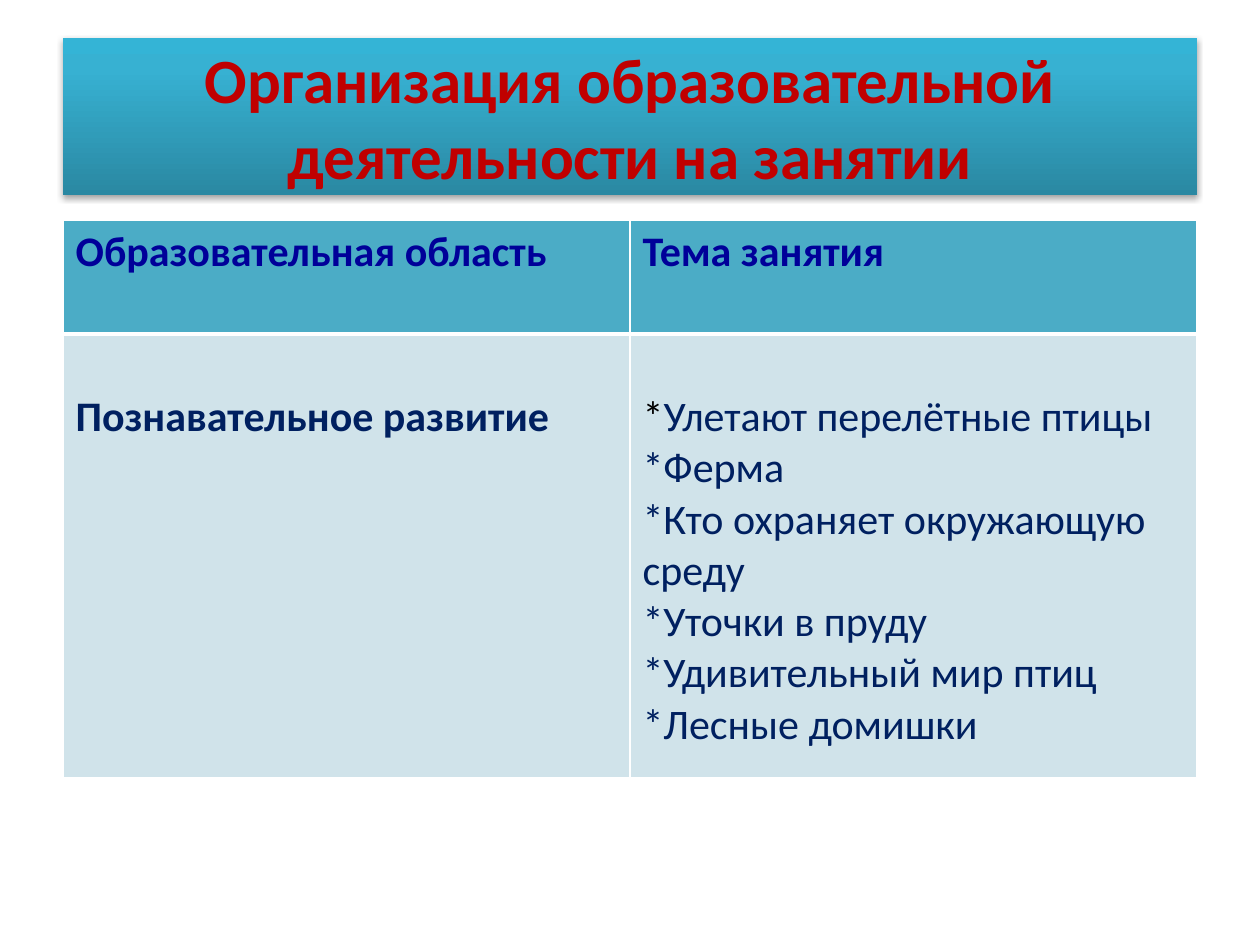
from dataclasses import dataclass

from lxml import etree
from pptx import Presentation, oxml
from pptx import util as u
from pptx.dml.color import RGBColor
from pptx.enum import text
from pptx.oxml.ns import nsdecls


@dataclass(frozen=True)
class Theme:
    font: str = "Calibri"
    title_size: int = 36
    table_size: int = 24
    title: str = "C00000"
    heading: str = "000099"
    body: str = "002060"
    star: str = "000000"
    header_fill: str = "4BACC6"
    body_fill: str = "D0E3EA"
    border: str = "FFFFFF"
    shadow: str = "000000"
    gradient: tuple = ((0, "2A88A2"), (80, "37B1D2"), (100, "34B4D6"))


theme = Theme()


def style(r, size, color, bold):
    r.font.name = theme.font
    r.font.size = u.Pt(size)
    r.font.bold = bold
    r.font.color.rgb = RGBColor.from_string(color)


def set_borders(cell, bottom):
    """Draw 1 pt cell borders, with the bottom one in its own width."""
    tc_pr = cell._tc.get_or_add_tcPr()
    for i, (side, width) in enumerate((("L", 1), ("R", 1), ("T", 1), ("B", bottom))):
        ln = oxml.parse_xml(
            f'<a:ln{side} {nsdecls("a")} w="{u.Pt(width)}"><a:solidFill>'
            f'<a:srgbClr val="{theme.border}"/></a:solidFill></a:ln{side}>')
        tc_pr.insert(i, ln)


prs = Presentation()
prs.slide_width, prs.slide_height = u.Inches(10), u.Inches(7.5)
s = prs.slides.add_slide(prs.slide_layouts[5])

# Title banner
title = s.shapes.title
title.left, title.top = u.Inches(0.5), u.Inches(0.3)
title.width, title.height = u.Inches(9), u.Inches(1.25)
tf = title.text_frame
tf.text = "Организация образовательной деятельности на занятии"
tf.word_wrap = True
tf.auto_size = text.MSO_AUTO_SIZE.NONE
tf.vertical_anchor = text.MSO_ANCHOR.MIDDLE
p = tf.paragraphs[0]
p.alignment = text.PP_ALIGN.CENTER
style(p.runs[0], theme.title_size, theme.title, True)

stops = "".join(f'<a:gs pos="{pos * 1000}"><a:srgbClr val="{color}"/></a:gs>'
                for pos, color in theme.gradient)
sp_pr = title._element.spPr
sp_pr.append(oxml.parse_xml(
    f'<a:prstGeom {nsdecls("a")} prst="rect"><a:avLst/></a:prstGeom>'))
sp_pr.append(oxml.parse_xml(
    f'<a:gradFill {nsdecls("a")} rotWithShape="1"><a:gsLst>{stops}</a:gsLst>'
    f'<a:lin ang="16200000" scaled="0"/></a:gradFill>'))
sp_pr.append(oxml.parse_xml(
    f'<a:effectLst {nsdecls("a")}><a:outerShdw blurRad="{u.Pt(3.1)}" '
    f'dist="{u.Pt(1.8)}" dir="5400000" rotWithShape="0">'
    f'<a:srgbClr val="{theme.shadow}"><a:alpha val="35000"/></a:srgbClr>'
    f'</a:outerShdw></a:effectLst>'))

# Table of educational areas and lesson topics
topics = ["Улетают перелётные птицы", "Ферма", "Кто охраняет окружающую среду",
          "Уточки в пруду", "Удивительный мир птиц", "Лесные домишки"]
rows = [
    ["Образовательная область", "Тема занятия"],
    ["Познавательное развитие", "\n".join("*" + topic for topic in topics)],
]
table = s.shapes.add_table(2, 2, u.Inches(0.5), u.Inches(1.75),
                           u.Inches(9), u.Inches(4.42)).table
for row, height in zip(table.rows, (0.9, 3.52)):
    row.height = u.Inches(height)

for i, row in enumerate(rows):
    header = i == 0
    for j, content in enumerate(row):
        cell = table.cell(i, j)
        cell.text_frame.text = content
        cell.margin_top = u.Inches(0.05 if header else 0.46)
        cell.fill.solid()
        cell.fill.fore_color.rgb = RGBColor.from_string(
            theme.header_fill if header else theme.body_fill)
        set_borders(cell, 3 if header else 1)
        for p in cell.text_frame.paragraphs:
            style(p.runs[0], theme.table_size,
                  theme.heading if header else theme.body, header or j == 0)

# The first topic has a black star
p = table.cell(1, 1).text_frame.paragraphs[0]
p.runs[0].text = "*"
style(p.runs[0], theme.table_size, theme.star, False)
r = p.add_run()
r.text = topics[0]
style(r, theme.table_size, theme.body, False)

prs.save("out.pptx")
